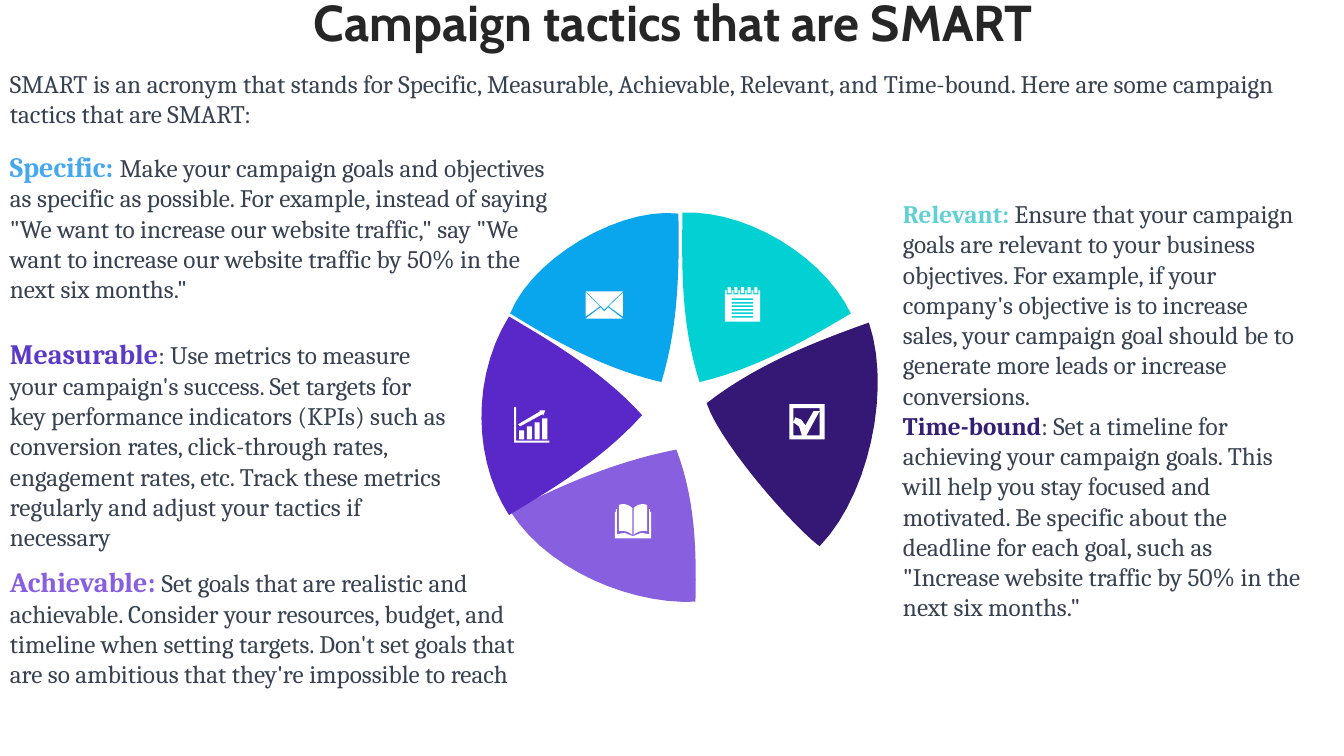
from itertools import chain

from pptx import Presentation
from pptx.dml.color import RGBColor
from pptx.enum.text import MSO_ANCHOR, MSO_AUTO_SIZE, PP_ALIGN
from pptx.util import Pt

CENTER = PP_ALIGN.CENTER
MIDDLE = MSO_ANCHOR.MIDDLE
TOP = MSO_ANCHOR.TOP
NO_FIT = MSO_AUTO_SIZE.NONE
INK, GREY, WHITE = "262626", "374151", "FFFFFF"
STEPS = 14

INTRO = ("SMART is an acronym that stands for Specific, Measurable, Achievable, Relevant, "
         "and Time-bound. Here are some campaign tactics that are SMART:")
SPECIFIC = ("Make your campaign goals and objectives as specific as possible. For example, "
            "instead of saying \"We want to increase our website traffic,\" say \"We want to "
            "increase our website traffic by 50% in the next six months.\"")
MEASURE = (": Use metrics to measure your campaign's success. Set targets for key performance "
           "indicators (KPIs) such as conversion rates, click-through rates, engagement rates, "
           "etc. Track these metrics regularly and adjust your tactics if necessary")
ACHIEVE = ("Set goals that are realistic and achievable. Consider your resources, budget, and "
           "timeline when setting targets. Don't set goals that are so ambitious that they're "
           "impossible to reach")
RELEVANT = ("Ensure that your campaign goals are relevant to your business objectives. For "
            "example, if your company's objective is to increase sales, your campaign goal "
            "should be to generate more leads or increase conversions.")
TIMELY = (": Set a timeline for achieving your campaign goals. This will help you stay focused "
          "and motivated. Be specific about the deadline for each goal, such as \"Increase "
          "website traffic by 50% in the next six months.\"")

NOTES = [
    ((0, 45.4, 936.7, 51), [[(INTRO, 18, GREY, False)]]),
    ((0, 103, 398.9, 140), [[("Specific: ", 20, "45A7EE", True), (SPECIFIC, 18, GREY, False)]]),
    ((0, 236.9, 329.8, 163), [[("Measurable", 20, "5C3AC8", True), (MEASURE, 18, GREY, False)]]),
    ((0, 399.6, 384.5, 119), [[("Achievable: ", 20, "875FE0", True), (ACHIEVE, 18, GREY, False)]]),
    ((637.9, 138.2, 301, 356), [
        [("Relevant: ", 18, "60D1D3", True), (RELEVANT, 18, GREY, False)],
        [("Time-bound", 18, "351F76", True), (TIMELY, 18, GREY, False)]]),
]

PETALS = [
    ("0AA6ED", [(140.4, 0.7), (141.1, 41), (140.4, 81.4), (128.2, 121), (87.8, 111.6),
                (54, 92.9), (20.2, 72), (36, 32.4), (98.6, -4.3), (140.4, 0.7)]),
    ("01D1D3", [(143.3, 0), (188.6, -2.2), (244.1, 31), (263.5, 72), (229.7, 92.2),
                (195.1, 111.6), (155.5, 121), (142.6, 81.4), (142.6, 41), (143.3, 0)]),
    ("875FDF", [(20.2, 213.1), (57.6, 194.4), (95, 177.8), (139, 169.2), (152.6, 205.2),
                (153.4, 241.2), (152.6, 277.9), (107.3, 280.1), (46.8, 255.6), (20.2, 213.1)]),
    ("351876", [(276.5, 78.5), (293, 127.4), (275.8, 203), (241.2, 238.3), (218.9, 221),
                (169.2, 162.7), (160.6, 136.1), (195.8, 108.7), (236.2, 92.9), (276.5, 78.5)]),
    ("5A28C8", [(114.5, 144.7), (87.1, 175), (53.3, 195.8), (19.4, 216), (-5.8, 177.8),
                (-7.9, 118.1), (19.4, 74.2), (53.3, 94.3), (87.1, 114.5), (114.5, 144.7)]),
]


def paint(hue):
    """Turn a hex string into a colour."""
    return RGBColor.from_string(hue)


def style(item, **form):
    """Set each given value on the item."""
    for name, value in form.items():
        setattr(item, name, value)


def place(item, box):
    """Move an item to a box given in points."""
    style(item, **dict(zip(("left", "top", "width", "height"), map(Pt, box))))


def write(para, text, size, hue, bold, face="Cambria"):
    """Add one formatted run to a paragraph."""
    run = para.add_run()
    run.text = text
    style(run.font, name=face, size=Pt(size), bold=bold)
    run.font.color.rgb = paint(hue)


def outline(slide, spot, rings, hue):
    """Draw closed rings, offset to a spot, as one filled outline."""
    left, top = spot
    rings = [[(Pt(left + x), Pt(top + y)) for x, y in ring] for ring in rings]
    pen = slide.shapes.build_freeform(*rings[0][0], scale=1.0)
    pen.add_line_segments(rings[0][1:], close=True)
    for ring in rings[1:]:
        pen.move_to(*ring[0])
        pen.add_line_segments(ring[1:], close=True)
    shape = pen.convert_to_shape()
    shape.shadow.inherit = False
    shape.fill.solid()
    shape.fill.fore_color.rgb = paint(hue)
    shape.line.fill.background()


def curve(knots):
    """Trace a chain of cubic curves through its knots."""
    trail = [knots[0]]
    for at in range(0, len(knots) - 1, 3):
        quad = knots[at:at + 4]
        for step in range(1, STEPS + 1):
            t = step / STEPS
            mix = ((1 - t) ** 3, 3 * t * (1 - t) ** 2, 3 * t * t * (1 - t), t ** 3)
            trail.append(tuple(sum(m * p[axis] for m, p in zip(mix, quad)) for axis in (0, 1)))
    return trail


def rect(x, y, wide, high):
    """Give the corners of a rectangle."""
    return [(x, y), (x + wide, y), (x + wide, y + high), (x, y + high)]


def flip(ring, wide):
    """Mirror a ring from left to right."""
    return [(wide - x, y) for x, y in reversed(ring)]


def letter():
    """Give the rings of an envelope."""
    side = [(0, 0.8), (10, 10.8), (0, 18)]
    return [[(0, 0), (26.5, 0), (13.25, 13)], side, flip(side, 26.5),
            [(10.5, 11.5), (13.25, 14.4), (16, 11.5), (26.5, 19.5), (0, 19.5)]]


def pad():
    """Give the rings of a ruled notepad."""
    lines = [rect(5, 7.9 + 2.5 * row, 15.2, 1.3) for row in range(6)]
    coils = chain.from_iterable(
        (rect(1.4 + 4.75 * n, 2.2, 3.6, 2.9), rect(2.1 + 4.75 * n, 0, 2.2, 4.3))
        for n in range(5))
    return [rect(0, 2.2, 25.2, 22.3), *lines, *coils]


def graph():
    """Give the rings of a rising bar graph."""
    bars = [rect(3.6 + 5.5 * n, 16.6 - 2.9 * n, 3.6, 6.4 + 2.9 * n) for n in range(4)]
    axes = [(0, 0), (1.4, 0), (1.4, 23.8), (25.2, 23.8), (25.2, 25.2), (0, 25.2)]
    arrow = [(18, 2.2), (22.3, 2.2), (20.9, 5.8), (20.2, 5), (4.3, 13.7), (2.9, 12.2),
             (18.7, 2.9)]
    return [axes, arrow, *bars]


def book():
    """Give the rings of an open book."""
    page = curve([(2.9, 0.7), (6.5, -0.7), (10, 0.5), (12.5, 2.9), (12.5, 8), (12.5, 15),
                  (12.5, 22), (9.5, 19.5), (6.5, 18.8), (2.9, 19.4)])
    edge = [(0, 24.5), (0, 5.8), (0.8, 5.8), (0.8, 3.6), (1.4, 3.6), (1.4, 21.6),
            (7, 20.6), (12.2, 22.7)]
    return [page, flip(page, 25.9), edge + flip(edge, 25.9)]


def check():
    """Give the rings of a ticked box."""
    tick = [(4.3, 9.4), (8.5, 11), (11.5, 15.1), (17.3, 5), (21.6, 5), (12.2, 22.3),
            (9, 22.3), (7, 16), (2.9, 13)]
    return [rect(0, 0, 25.2, 25.2), rect(2.9, 2.9, 18.7, 19.4), tick]


def wheel(slide, box):
    """Draw the five petals and their icons in a box."""
    left, top = box[:2]
    for hue, knots in PETALS:
        outline(slide, (left, top), [curve(knots)], hue)
    icons = [(74.2, 56.2, letter()), (173.5, 53.3, pad()), (23, 139, graph()),
             (95, 208.1, book()), (219.6, 136.8, check())]
    for x, y, rings in icons:
        outline(slide, (left + x, top + y), rings, WHITE)


def title(slide, box):
    """Fill the title placeholder in a box."""
    head = slide.shapes.title
    place(head, box)
    frame = head.text_frame
    style(frame, vertical_anchor=MIDDLE, auto_size=NO_FIT, word_wrap=True,
          margin_top=0, margin_bottom=0)
    para = frame.paragraphs[0]
    style(para, alignment=CENTER, line_spacing=0.9, space_before=Pt(0))
    write(para, "Campaign tactics that are SMART", 36, INK, True, "Cabin")


def note(slide, box, paras):
    """Write paragraphs of runs in a box."""
    frame = slide.shapes.add_textbox(*map(Pt, box)).text_frame
    style(frame, word_wrap=True, auto_size=NO_FIT, vertical_anchor=TOP)
    for at, runs in enumerate(paras):
        para = frame.add_paragraph() if at else frame.paragraphs[0]
        for run in runs:
            write(para, *run)


def main():
    """Build and save the slide."""
    deck = Presentation()
    style(deck, slide_width=Pt(960), slide_height=Pt(540))
    slide = deck.slides.add_slide(deck.slide_layouts[5])
    title(slide, (25.2, 0, 911.5, 36))
    wheel(slide, (344.2, 151.9, 285, 280))
    for box, paras in NOTES:
        note(slide, box, paras)
    deck.save("out.pptx")


if __name__ == "__main__":
    main()
